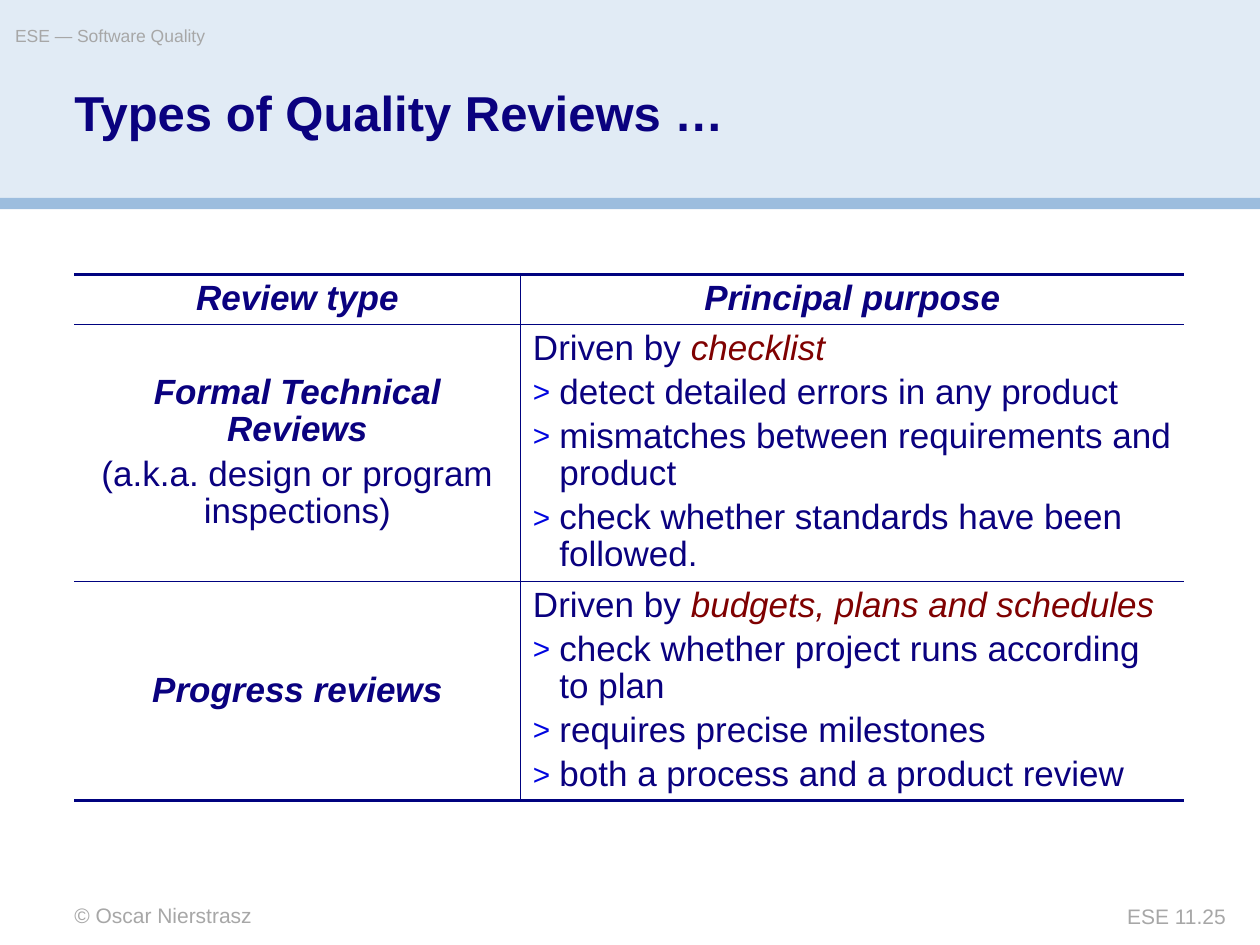
from lxml import etree
from pptx import Presentation
from pptx import util as u
from pptx.dml.color import RGBColor
from pptx.enum import shapes, text
from pptx.oxml.ns import qn

NAVY, RED, GREY, BORDER = "0A017F", "7F0101", "A7A7A7", "00027F"
CENTER = text.PP_ALIGN.CENTER


def color(value):
    return RGBColor.from_string(value)


def write(paragraph, words, size=20, fill=NAVY, bold=False, italic=False, align=None):
    run = paragraph.add_run()
    run.text = words
    run.font.name = "Arial"
    run.font.size = u.Pt(size)
    run.font.bold, run.font.italic = bold, italic
    run.font.color.rgb = color(fill)
    if align is not None:
        paragraph.alignment = align


presentation = Presentation()
presentation.slide_width, presentation.slide_height = u.Inches(10), u.Inches(7.5)
slide = presentation.slides.add_slide(presentation.slide_layouts[5])

# Header bands
for top, height, fill in [(0, 1.58, "E1EBF5"), (1.57, 0.09, "9CBDDE")]:
    band = slide.shapes.add_shape(shapes.MSO_SHAPE.RECTANGLE, 0, u.Inches(top),
                                  u.Inches(10), u.Inches(height))
    band.shadow.inherit = False
    band.fill.solid()
    band.fill.fore_color.rgb = color(fill)
    band.line.fill.background()

# Title, brought in front of the bands, then header and footer
title = slide.shapes.title
slide.shapes.element.append(title.element)
title.left, title.top = u.Inches(0.59), u.Inches(0.71)
title.width, title.height = u.Inches(7.24), u.Inches(0.89)
heading = title.text_frame.paragraphs[0]
heading.line_spacing = 0.9
write(heading, "Types of Quality Reviews …", size=28, bold=True, align=text.PP_ALIGN.LEFT)

frames = [title.text_frame]
for words, left, top, width, height, size, align in [
    ("© Oscar Nierstrasz", 0.59, 7.16, 4.17, 0.2, 12, text.PP_ALIGN.LEFT),
    ("ESE — Software Quality", 0.12, 0.2, 5.9, 0.28, 10, text.PP_ALIGN.LEFT),
    ("ESE 11.25", 8.25, 7.17, 1.48, 0.2, 12, text.PP_ALIGN.RIGHT),
]:
    box = slide.shapes.add_textbox(u.Inches(left), u.Inches(top),
                                   u.Inches(width), u.Inches(height))
    write(box.text_frame.paragraphs[0], words, size=size, fill=GREY, align=align)
    frames.append(box.text_frame)

for frame in frames:
    frame.margin_left = frame.margin_right = frame.margin_top = frame.margin_bottom = 0
    frame.word_wrap = True
    frame.auto_size = text.MSO_AUTO_SIZE.NONE
    frame.vertical_anchor = text.MSO_ANCHOR.TOP

# Review table
columns, rows = [3.54, 5.27], [0.39, 2.04, 1.73]
table = slide.shapes.add_table(len(rows), len(columns), u.Inches(0.59), u.Inches(2.18),
                               u.Inches(sum(columns)), u.Inches(sum(rows))).table
table.first_row = table.horz_banding = False
for column, width in zip(table.columns, columns):
    column.width = u.Inches(width)
for row, height in zip(table.rows, rows):
    row.height = u.Inches(height)

# Centred cells: (words, emphasised) for each paragraph
centred = {
    (0, 0): [("Review type", True)],
    (0, 1): [("Principal purpose", True)],
    (1, 0): [("Formal Technical Reviews", True),
             ("(a.k.a. design or program inspections)", False)],
    (2, 0): [("Progress reviews", True)],
}
for (row, column), lines in centred.items():
    cell = table.cell(row, column)
    cell.vertical_anchor = text.MSO_ANCHOR.MIDDLE
    for index, (words, strong) in enumerate(lines):
        paragraph = cell.text_frame.add_paragraph() if index else cell.text_frame.paragraphs[0]
        write(paragraph, words, bold=strong, italic=strong, align=CENTER)

# Purpose cells: what drives the review, then its bulleted aims
purposes = {
    1: ("checklist", [
        "detect detailed errors in any product",
        "mismatches between requirements and product",
        "check whether standards have been followed."]),
    2: ("budgets, plans and schedules", [
        "check whether project runs according to plan",
        "requires precise milestones",
        "both a process and a product review"]),
}
for row, (driver, aims) in purposes.items():
    frame = table.cell(row, 1).text_frame
    write(frame.paragraphs[0], "Driven by ")
    write(frame.paragraphs[0], driver, fill=RED, italic=True)
    for aim in aims:
        paragraph = frame.add_paragraph()
        write(paragraph, aim)
        properties = paragraph._p.get_or_add_pPr()
        properties.set("marL", str(u.Inches(0.21)))
        properties.set("indent", str(-u.Inches(0.21)))
        bullet_color = etree.SubElement(properties, qn("a:buClr"))
        etree.SubElement(bullet_color, qn("a:srgbClr"), val="0005DF")
        etree.SubElement(properties, qn("a:buSzPct"), val="85000")
        etree.SubElement(properties, qn("a:buFont"), typeface="Arial")
        etree.SubElement(properties, qn("a:buChar"), char=">")

# Paragraph spacing and borders: thick above and below, thin inside, open sides
last_row, last_column = len(rows) - 1, len(columns) - 1
for row in range(len(rows)):
    for column in range(len(columns)):
        cell = table.cell(row, column)
        for paragraph in cell.text_frame.paragraphs:
            paragraph.line_spacing = 0.95
            paragraph.space_before = u.Pt(4)
        borders = {
            "a:lnL": 1 if column else 0,
            "a:lnR": 1 if column < last_column else 0,
            "a:lnT": 1 if row else 2.25,
            "a:lnB": 1 if row < last_row else 2.25,
        }
        cell_properties = cell._tc.get_or_add_tcPr()
        for tag, weight in borders.items():
            line = etree.SubElement(cell_properties, qn(tag), w=str(u.Pt(weight)))
            if weight:
                solid = etree.SubElement(line, qn("a:solidFill"))
                etree.SubElement(solid, qn("a:srgbClr"), val=BORDER)
            else:
                etree.SubElement(line, qn("a:noFill"))
        cell.fill.background()

presentation.save("out.pptx")
